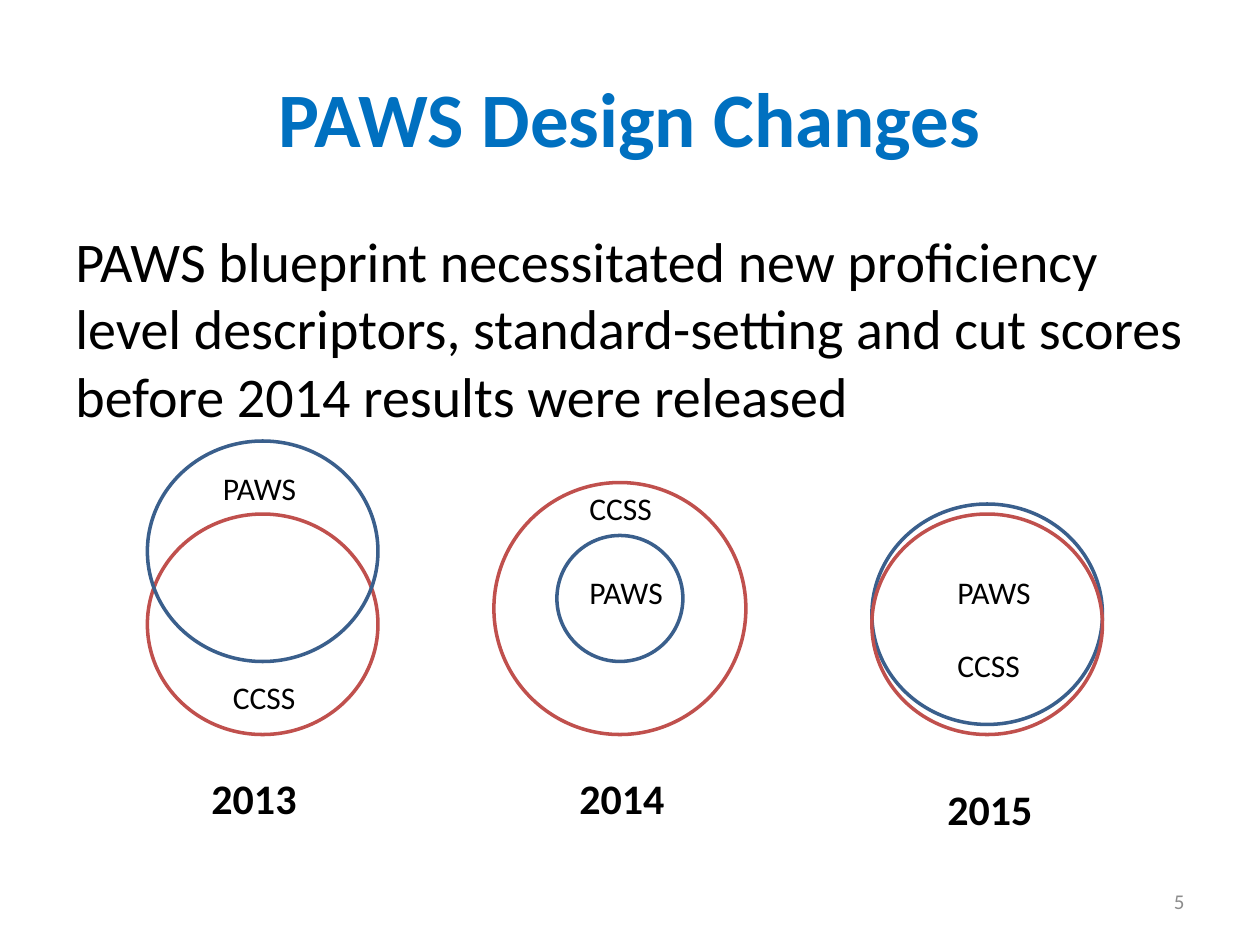
from pptx import Presentation, util as u
from pptx.dml.color import RGBColor
from pptx.enum import shapes, text

theme = {
    "face": "Calibri",
    "paws": "3A5F8C",
    "ccss": "C0504D",
    "title": dict(size=44, bold=True, color="0070C0"),
    "body": dict(size=32, bold=False, color="000000"),
    "label": dict(size=18, bold=False, color="000000"),
    "year": dict(size=24, bold=True, color="000000"),
    "page": dict(size=12, bold=False, color="8C8C8C"),
}

deck = Presentation()
deck.slide_width, deck.slide_height = u.Inches(10), u.Inches(7.5)
slide = deck.slides.add_slide(deck.slide_layouts[6])


def write(words, place, style, align="LEFT", anchor="TOP", wrap=True):
    box = slide.shapes.add_textbox(*map(u.Inches, place))
    frame = box.text_frame
    frame.word_wrap = wrap
    frame.vertical_anchor = text.MSO_ANCHOR[anchor]
    frame.text = words
    line = frame.paragraphs[0]
    line.alignment = text.PP_ALIGN[align]
    look = theme[style]
    font = line.runs[0].font
    form = dict(name=theme["face"], size=u.Pt(look["size"]), bold=look["bold"])
    for key, value in form.items():
        setattr(font, key, value)
    font.color.rgb = RGBColor.from_string(look["color"])


def ring(name, place):
    oval = slide.shapes.add_shape(shapes.MSO_SHAPE.OVAL, *map(u.Inches, place))
    oval.shadow.inherit = False
    oval.fill.background()
    oval.line.color.rgb = RGBColor.from_string(theme[name])
    oval.line.width = u.Pt(2)


write("PAWS Design Changes", (0.5, 0.3, 9, 1.25), "title", "CENTER", "MIDDLE")
write("PAWS blueprint necessitated new proficiency level descriptors, "
      "standard-setting and cut scores before 2014 results were released",
      (0.5, 1.75, 9, 4.42), "body")

years = [
    ("2013", (1.58, 6.08),
     [("ccss", (1.17, 4.08, 1.83, 1.75)), ("paws", (1.17, 3.5, 1.83, 1.75))],
     [("CCSS", (1.75, 5.33)), ("PAWS", (1.67, 3.67))]),
    ("2014", (4.5, 6.08),
     [("ccss", (3.92, 3.83, 2, 2)), ("paws", (4.42, 4.25, 1, 1))],
     [("CCSS", (4.58, 3.83)), ("PAWS", (4.58, 4.5))]),
    ("2015", (7.42, 6.17),
     [("paws", (6.92, 4, 1.83, 1.75)), ("ccss", (6.92, 4.08, 1.83, 1.75))],
     [("CCSS", (7.5, 5.08)), ("PAWS", (7.5, 4.5))]),
]
widths = {"CCSS": 0.7, "PAWS": 0.79}

for year, spot, rings, labels in years:
    for name, place in rings:
        ring(name, place)
    for name, start in labels:
        write(name, (*start, widths[name], 0.4), "label", wrap=False)
    write(year, (*spot, 0.88, 0.5), "year", wrap=False)

write("5", (7.17, 6.95, 2.33, 0.4), "page", "RIGHT", "MIDDLE")

deck.save("out.pptx")
